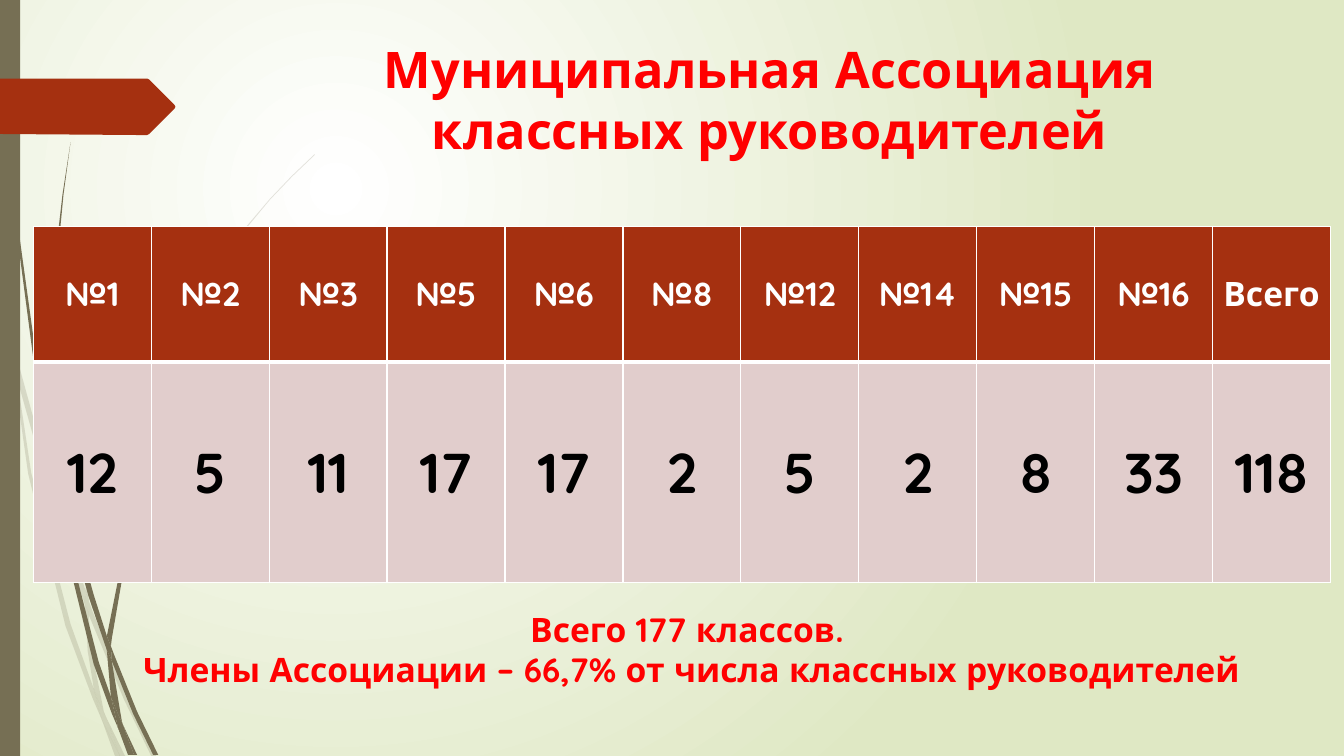
from lxml import etree
from pptx import Presentation
from pptx.dml.color import RGBColor
from pptx.enum import shapes, text
from pptx.oxml import ns
from pptx.util import Inches, Pt

FONT = "Quicksand"
RED, RUST, OLIVE, PINK = "FF0000", "A53010", "766F54", "E1CDCC"
WHITE, BLACK, GREEN = "FFFFFF", "000000", "DFE8C4"

PALE = [
    [(.11, 3.5), (.09, 3.22), (0, 2.82), (0, 2.99), (.1, 3.44)],
    [(.58, 5.22), (.84, 5.99), (.85, 5.86), (.62, 5.2), (.14, 3.45), (.17, 3.76)],
    [(.92, 6.07), (.88, 5.96), (.88, 6.1), (1.23, 6.94), (1.5, 7.5), (1.55, 7.5),
     (1.27, 6.92)],
    [(1.19, 7.5), (1.24, 7.5), (1.05, 7.11)],
    [(.93, 6.83), (.7, 6.19), (.31, 4.69), (.17, 3.76), (.11, 3.5), (.28, 4.7),
     (.65, 6.21), (.92, 6.93), (1.01, 7.14), (.99, 7.07)],
    [(.84, 5.99), (.87, 6.46), (.93, 6.83), (.96, 6.92), (1.05, 7.11), (1.03, 7.06),
     (.91, 6.46), (.88, 6.1), (.88, 6.08)],
    [(.88, 5.84), (1.1, 4.62), (1.6, 3.49), (2.29, 2.45), (2.68, 1.98), (2.9, 1.75),
     (3.12, 1.54), (3.12, 1.53), (2.89, 1.75), (2.68, 1.97), (2.28, 2.44),
     (1.58, 3.48), (1.07, 4.61), (.85, 5.84), (.85, 5.86), (.88, 5.96)],
    [(1.01, 7.14), (1.14, 7.5), (1.19, 7.5)],
    [(.88, 6.08), (.88, 6.1), (.88, 5.96), (.85, 5.86), (.84, 5.99)],
    [(.96, 6.92), (.93, 6.83), (.99, 7.07), (1.01, 7.14), (1.19, 7.5), (1.05, 7.11)],
]
DARK = [
    [(.07, 1.1), (.17, 2.33), (.33, 3.55), (.56, 4.77), (.57, 4.81), (.55, 4.57),
     (.55, 4.53), (.36, 3.55), (.19, 2.32), (.08, 1.09), (.05, .48), (.04, 0),
     (.03, 0), (.04, .48)],
    [(.88, 5.92), (1.06, 6.45), (1.06, 6.33), (1.06, 6.31), (.93, 5.9), (.6, 4.72),
     (.64, 5.05)],
    [(1.13, 6.49), (1.1, 6.41), (1.11, 6.56), (1.32, 7.08), (1.52, 7.49),
     (1.57, 7.49), (1.36, 7.06)],
    [(1.1, 6.91), (.98, 6.57), (.72, 5.56), (.64, 5.05), (.57, 4.77), (.68, 5.57),
     (.93, 6.59), (1.11, 7.08), (1.17, 7.22), (1.16, 7.17)],
    [(.6, 4.72), (.58, 4.53), (.54, 3.49), (.58, 2.45), (.63, 1.93), (.7, 1.41),
     (.62, 1.93), (.56, 2.45), (.52, 3.49), (.55, 4.49)],
    [(1.33, 7.49), (1.36, 7.49), (1.22, 7.19)],
    [(.57, 4.77), (.64, 5.05), (.6, 4.72), (.55, 4.49), (.55, 4.53)],
    [(1.11, 6.33), (1.25, 5.52), (1.58, 4.76), (2.05, 4.06), (2.31, 3.74),
     (2.45, 3.59), (2.61, 3.44), (2.6, 3.44), (2.45, 3.58), (2.31, 3.73),
     (2.04, 4.05), (1.56, 4.74), (1.22, 5.51), (1.06, 6.31), (1.1, 6.41)],
    [(1.17, 7.22), (1.27, 7.49), (1.31, 7.49)],
    [(1.06, 6.45), (1.1, 6.91), (1.16, 7.06), (1.22, 7.19), (1.21, 7.16),
     (1.11, 6.56), (1.09, 6.51)],
    [(1.06, 6.45), (1.09, 6.51), (1.11, 6.56), (1.1, 6.41), (1.06, 6.31)],
    [(1.16, 7.06), (1.1, 6.91), (1.16, 7.17), (1.17, 7.22), (1.3, 7.49),
     (1.33, 7.49), (1.22, 7.19)],
]
ARROW = [(0, .78), (1.46, .78), (1.48, .79), (1.73, 1.04), (1.74, 1.06), (1.73, 1.08),
         (1.48, 1.33), (1.46, 1.34), (1.36, 1.34), (0, 1.33)]
HEADS = ["№1", "№2", "№3", "№5", "№6", "№8", "№12", "№14", "№15", "№16", "Всего"]
COUNTS = ["12", "5", "11", "17", "17", "2", "5", "2", "8", "33", "118"]


def rgb(code):
    """Turn a hex string into a colour."""
    return RGBColor.from_string(code)


def child(node, tag, **attrs):
    """Append a drawing element with attributes."""
    return etree.SubElement(node, ns.qn(tag), attrs)


def paint(shape, code, alpha=None):
    """Fill a shape plainly, with optional opacity in percent."""
    shape.shadow.inherit = False
    shape.line.fill.background()
    shape.fill.solid()
    shape.fill.fore_color.rgb = rgb(code)
    if alpha:
        tone = shape.fill._xPr.find(".//" + ns.qn("a:srgbClr"))
        child(tone, "a:alpha", val=str(alpha * 1000))


def outline(slide, points, code, alpha=None):
    """Draw a closed filled outline."""
    spots = [(Inches(x), Inches(y)) for x, y in points]
    pen = slide.shapes.build_freeform(*spots[0])
    pen.add_line_segments(spots[1:], close=True)
    paint(pen.convert_to_shape(), code, alpha)


def style(frame, size, code):
    """Centre the text and format its runs."""
    frame.word_wrap = True
    for para in frame.paragraphs:
        para.alignment = text.PP_ALIGN.CENTER
        for run in para.runs:
            font = run.font
            font.name, font.size, font.bold = FONT, Pt(size), True
            font.color.rgb = rgb(code)


def backdrop(slide):
    """Set the radial background gradient."""
    fill = slide.background.fill
    fill.gradient()
    for stop, code, pos in zip(fill.gradient_stops, (WHITE, GREEN), (0, 1)):
        stop.color.rgb, stop.position = rgb(code), pos
    grad = slide.background._cSld.find(".//" + ns.qn("a:gradFill"))
    grad.remove(grad.find(ns.qn("a:lin")))
    ring = child(grad, "a:path", path="circle")
    child(ring, "a:fillToRect", l="50000", t="50000", r="100000", b="100000")


def edge(cell, low):
    """Give a cell white borders, the lower one of its own width."""
    props = cell._tc.get_or_add_tcPr()
    for side, width in zip("LRTB", (1, 1, 1, low)):
        line = child(props, "a:ln" + side, w=str(Pt(width)))
        child(child(line, "a:solidFill"), "a:srgbClr", val=WHITE)


def grid(slide):
    """Add the table of schools and member counts."""
    table = slide.shapes.add_table(2, len(HEADS), Inches(.33), Inches(2.25),
                                   Inches(12.87), Inches(3.53)).table
    for col in table.columns:
        col.width = Inches(1.17)
    looks = [(HEADS, 1.34, 24, WHITE, RUST, 3), (COUNTS, 2.19, 40, BLACK, PINK, 1)]
    for row, (words, high, size, ink, fill, low) in zip(table.rows, looks):
        row.height = Inches(high)
        for cell, word in zip(row.cells, words):
            cell.text_frame.text = word
            style(cell.text_frame, size, ink)
            cell.vertical_anchor = text.MSO_ANCHOR.MIDDLE
            cell.margin_left = cell.margin_right = Inches(.05)
            edge(cell, low)
            cell.fill.solid()
            cell.fill.fore_color.rgb = rgb(fill)


def place(shape, left, top, width, height):
    """Move and size a shape in inches."""
    shape.left, shape.top = Inches(left), Inches(top)
    shape.width, shape.height = Inches(width), Inches(height)


def main():
    """Build and save the slide."""
    deck = Presentation()
    deck.slide_width, deck.slide_height = Inches(13.33), Inches(7.5)
    slide = deck.slides.add_slide(deck.slide_layouts[5])
    backdrop(slide)
    for wisp in PALE:
        outline(slide, wisp, OLIVE, 20)
    for wisp in DARK:
        outline(slide, wisp, OLIVE)
    bar = slide.shapes.add_shape(shapes.MSO_SHAPE.RECTANGLE, 0, 0, Inches(.2), Inches(7.5))
    paint(bar, OLIVE)
    outline(slide, ARROW, RUST)

    title = slide.shapes.title
    place(title, 2.76, .28, 9.75, 1.4)
    title.text_frame.text = "Муниципальная Ассоциация классных руководителей"
    title.text_frame.auto_size = text.MSO_AUTO_SIZE.NONE
    title.text_frame.vertical_anchor = text.MSO_ANCHOR.MIDDLE
    style(title.text_frame, 36, RED)

    grid(slide)
    note = slide.shapes.add_textbox(Inches(.65), Inches(5.99), Inches(12.42), Inches(.91))
    note.text_frame.text = ("Всего 177 классов. \n"
                            "Члены Ассоциации – 66,7% от числа классных руководителей")
    style(note.text_frame, 24, RED)
    deck.save("out.pptx")


if __name__ == "__main__":
    main()
